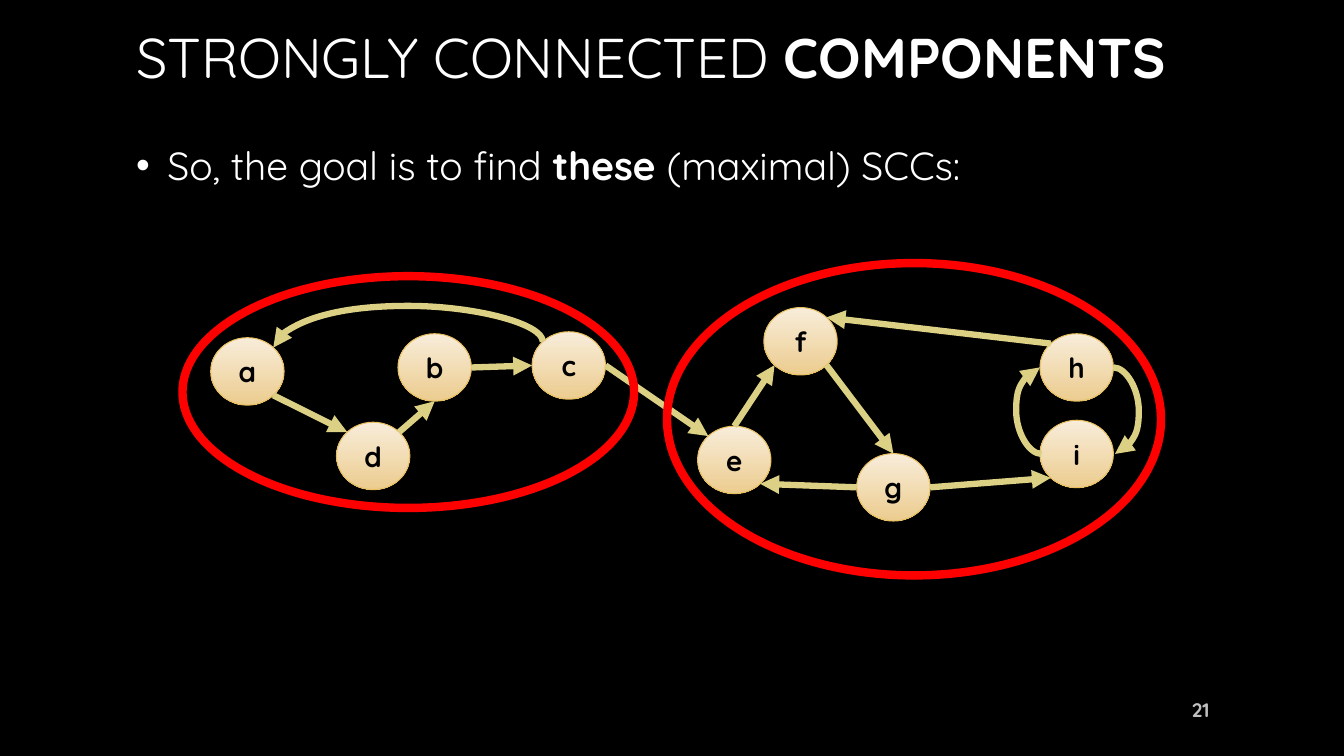
"""Build the slide that circles the strongly connected components of a graph."""
from math import cos, radians, sin

from lxml import etree
from pptx import Presentation
from pptx import util as u
from pptx.dml.color import RGBColor
from pptx.enum import shapes, text
from pptx.oxml import ns

FONT = "Quicksand"
WHITE = "FFFFFF"
NODE_WIDTH, NODE_HEIGHT = 1.85, 1.7
NODES = {
    "a": (5.31, 8.51), "b": (10.03, 8.41), "c": (13.41, 8.36),
    "d": (8.48, 10.64), "e": (17.58, 10.74), "f": (19.25, 7.75),
    "g": (21.59, 11.43), "h": (26.21, 8.41), "i": (26.21, 10.59),
}
ANGLES = {name: 45 * step for step, name in
          enumerate(["E", "SE", "S", "SW", "W", "NW", "N", "NE"])}
EDGES = [
    ("a", "SE", "d", "NW"), ("d", "NE", "b", "S"), ("b", "E", "c", "W"),
    ("c", "E", "e", "NW"), ("e", "N", "f", "SW"), ("f", "SE", "g", "N"),
    ("g", "W", "e", "SE"), ("g", "E", "i", "SW"), ("h", "NW", "f", "NE"),
]
COMPONENTS = [(4.6, 6.96, 11.38, 5.84), (16.81, 6.63, 12.45, 7.87)]


def color(value):
    """Turn a hex string into a colour."""
    return RGBColor.from_string(value)


def site(node, side):
    """Return the point on a node's rim in a compass direction."""
    left, top = NODES[node]
    angle = radians(ANGLES[side])
    return (left + NODE_WIDTH / 2 * (1 + cos(angle)),
            top + NODE_HEIGHT / 2 * (1 + sin(angle)))


def add_spans(para, spans, size, shade):
    """Add (words, bold) pairs to a paragraph."""
    for words, bold in spans:
        span = para.add_run()
        span.text = words
        span.font.name = FONT
        span.font.size = u.Pt(size)
        span.font.bold = bold
        span.font.color.rgb = color(shade)


def add_text(page, place, spans, size, shade=WHITE,
             anchor=text.MSO_ANCHOR.MIDDLE, align=text.PP_ALIGN.LEFT):
    """Add a wrapped text box and return its paragraph."""
    frame = page.shapes.add_textbox(*map(u.Cm, place)).text_frame
    frame.word_wrap = True
    frame.vertical_anchor = anchor
    para = frame.paragraphs[0]
    para.alignment = align
    add_spans(para, spans, size, shade)
    return para


def add_bullet(para, indent):
    """Give a paragraph a hanging round bullet."""
    properties = para._p.get_or_add_pPr()
    properties.set("marL", str(u.Cm(indent)))
    properties.set("indent", str(u.Cm(-indent)))
    etree.SubElement(properties, ns.qn("a:buFont"), typeface="Arial")
    etree.SubElement(properties, ns.qn("a:buChar"), char="•")


def add_oval(page, place, line, weight):
    """Add an ellipse with an outline and no fill."""
    oval = page.shapes.add_shape(shapes.MSO_SHAPE.OVAL, *map(u.Cm, place))
    oval.shadow.inherit = False
    oval.fill.background()
    oval.line.color.rgb = color(line)
    oval.line.width = u.Pt(weight)
    return oval


def add_node(page, name):
    """Add a labelled graph node."""
    node = add_oval(page, (*NODES[name], NODE_WIDTH, NODE_HEIGHT), "E7BF5F", 0.75)
    node.fill.gradient()
    node.fill.gradient_angle = 270
    for stop, shade in zip(node.fill.gradient_stops, ("F8EDDA", "ECCC8F")):
        stop.color.rgb = color(shade)
    node.text_frame.vertical_anchor = text.MSO_ANCHOR.MIDDLE
    para = node.text_frame.paragraphs[0]
    para.alignment = text.PP_ALIGN.CENTER
    add_spans(para, [(name, True)], 20, "000000")


def add_arrow(page, start, end, kind=shapes.MSO_CONNECTOR.STRAIGHT):
    """Add an arrow between two points."""
    arrow = page.shapes.add_connector(kind, *map(u.Cm, (*start, *end)))
    arrow.line.color.rgb = color("DCD084")
    arrow.line.width = u.Pt(4.5)
    etree.SubElement(arrow.line._get_or_add_ln(), ns.qn("a:tailEnd"), type="triangle")
    etree.SubElement(arrow._element.spPr, ns.qn("a:effectLst"))
    return arrow


def add_curve(page, start, end, bulge, turn=0):
    """Add a curved arrow that bulges sideways, turned by whole degrees."""
    arrow = add_arrow(page, start, end, shapes.MSO_CONNECTOR.CURVE)
    bend = round(100000 * bulge / abs(end[0] - start[0]))
    geometry = arrow._element.spPr.find(ns.qn("a:prstGeom"))
    guides = geometry.find(ns.qn("a:avLst"))
    etree.SubElement(guides, ns.qn("a:gd"), name="adj1", fmla=f"val {bend}")
    if turn:
        arrow._element.spPr.find(ns.qn("a:xfrm")).set("rot", str(turn * 60000))


def add_curves(page):
    """Add the arc over the left component and the loop between h and i."""
    (c_x, c_y), (a_x, a_y) = site("c", "NW"), site("a", "NE")
    middle_x, middle_y = (a_x + c_x) / 2, (a_y + c_y) / 2
    half_drop, half_span = (a_y - c_y) / 2, (c_x - a_x) / 2
    add_curve(page, (middle_x + half_drop, middle_y + half_span),
              (middle_x - half_drop, middle_y - half_span), -0.9, 270)
    nudge, bulge = 0.04, 0.64
    right, h_y = site("h", "E")
    left, i_y = site("i", "W")
    add_curve(page, (right, h_y), (right + nudge, i_y), bulge)
    add_curve(page, (left + nudge, i_y), (left, h_y), bulge)


def main():
    """Build and save the slide."""
    deck = Presentation()
    deck.slide_width, deck.slide_height = u.Cm(33.87), u.Cm(19.05)
    page = deck.slides.add_slide(deck.slide_layouts[6])
    page.background.fill.solid()
    page.background.fill.fore_color.rgb = color("000000")

    add_text(page, (3.18, 0, 27.51, 2.84),
             [("STRONGLY CONNECTED ", False), ("COMPONENTS", True)], 40)
    goal = add_text(page, (3.18, 3.43, 27.51, 12.78),
                    [("So, the goal is to find ", False), ("these ", True),
                     ("(maximal) SCCs:", False)], 28, anchor=text.MSO_ANCHOR.TOP)
    goal.space_before, goal.space_after = u.Pt(5.6), u.Pt(6)
    add_bullet(goal, 0.79)

    for name in NODES:
        add_node(page, name)
    for tail, tail_side, head, head_side in EDGES:
        add_arrow(page, site(tail, tail_side), site(head, head_side))
    add_curves(page)
    for place in COMPONENTS:
        add_oval(page, place, "FF0000", 6)

    add_text(page, (29.21, 17.37, 1.52, 1.02), [("21", True)], 14, "BFBFBF",
             align=text.PP_ALIGN.RIGHT)
    deck.save("out.pptx")


if __name__ == "__main__":
    main()
